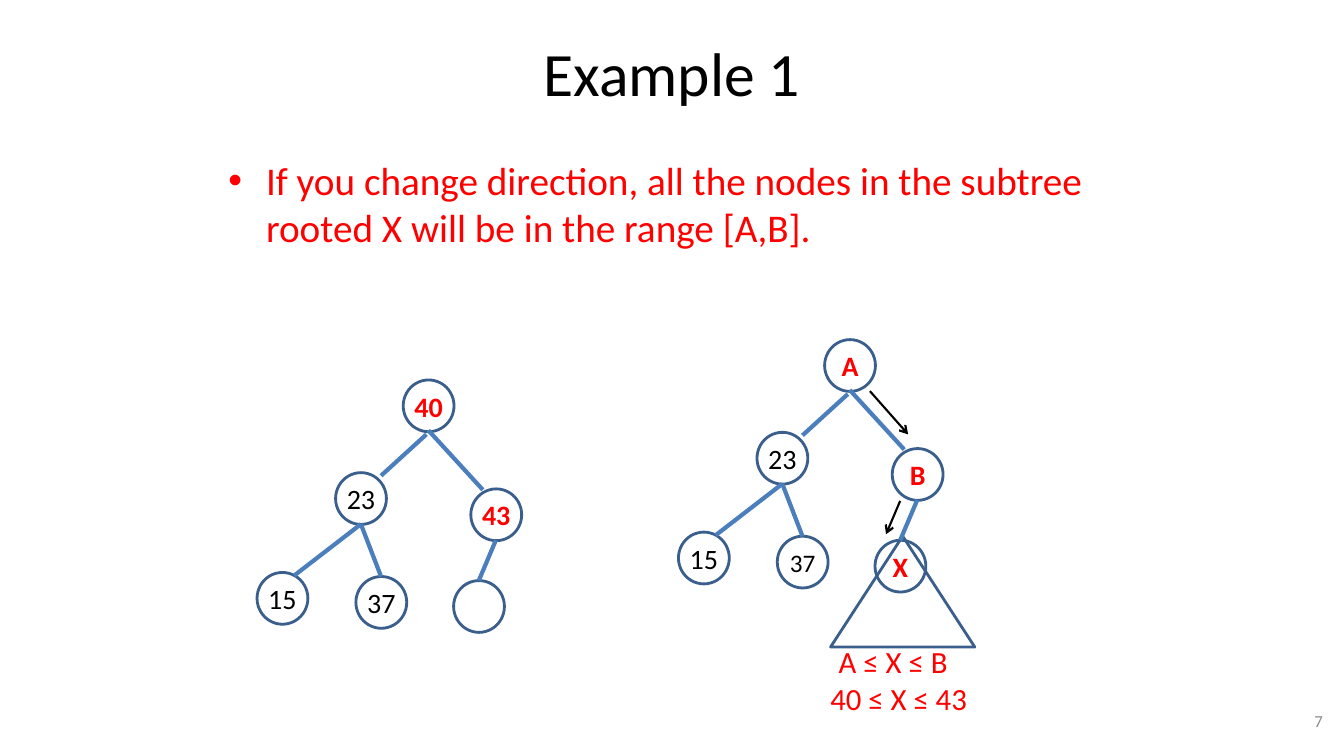
from lxml import etree
from pptx import Presentation
from pptx.dml.color import RGBColor
from pptx.enum.shapes import MSO_CONNECTOR as CONN, MSO_SHAPE as SHAPE
from pptx.enum.text import MSO_ANCHOR as ANCHOR, PP_ALIGN as ALIGN
from pptx.oxml.ns import qn
from pptx.util import Pt

BLACK = RGBColor(0x00, 0x00, 0x00)
RED = RGBColor(0xFF, 0x00, 0x00)
GREY = RGBColor(0x8C, 0x8C, 0x8C)
OUTLINE = RGBColor(0x3A, 0x5F, 0x8C)
EDGE = RGBColor(0x4B, 0x7E, 0xBC)

NODE_W, NODE_H = 36.3, 37
NODE_OFFSETS = [(0, 0), (-48.3, 66.2), (48.3, 77.8),
                (-104.4, 137.5), (-33.8, 140.4), (36, 143.3)]
EDGE_OFFSETS = [(16.6, 38.9, -15.8, 68.4), (18, 36, 56.9, 78.5),
                (-15.8, 140.4, -30.2, 103), (-30.2, 103, -77.8, 139.7),
                (66.2, 114.5, 54, 143.3)]


def add_text(p, text, size=20, color=BLACK, bold=False, align=ALIGN.LEFT,
             left=0, hanging=0, bullet=None, font="Calibri"):
    p.alignment = align
    pPr = p._p.get_or_add_pPr()
    if left:
        pPr.set("marL", str(Pt(left)))
        pPr.set("indent", str(-Pt(hanging)))
    if bullet:
        etree.SubElement(pPr, qn("a:buFont")).set("typeface", "Arial")
        etree.SubElement(pPr, qn("a:buChar")).set("char", bullet)
    r = p.add_run()
    r.text = text
    r.font.name, r.font.size, r.font.bold = font, Pt(size), bold
    r.font.color.rgb = color


class TreeSlide:
    """Draws text, nodes, edges and trees on one slide in one style."""

    def __init__(self, prs):
        self.s = prs.slides.add_slide(prs.slide_layouts[6])

    def text(self, x, y, w, h, lines, anchor=ANCHOR.TOP):
        tf = self.s.shapes.add_textbox(Pt(x), Pt(y), Pt(w), Pt(h)).text_frame
        tf.word_wrap = True
        tf.vertical_anchor = anchor
        for i, (text, style) in enumerate(lines):
            add_text(tf.add_paragraph() if i else tf.paragraphs[0], text, **style)

    def outline(self, shapes, kind, x, y, w, h):
        sp = shapes.add_shape(kind, Pt(x), Pt(y), Pt(w), Pt(h))
        sp.shadow.inherit = False
        sp.fill.background()
        sp.line.color.rgb = OUTLINE
        sp.line.width = Pt(2)
        return sp

    def node(self, shapes, x, y, label, **style):
        tf = self.outline(shapes, SHAPE.OVAL, x, y, NODE_W, NODE_H).text_frame
        tf.margin_left = tf.margin_right = tf.margin_top = tf.margin_bottom = 0
        tf.word_wrap = False
        tf.vertical_anchor = ANCHOR.MIDDLE
        if label:
            add_text(tf.paragraphs[0], label, align=ALIGN.CENTER, **style)

    def line(self, shapes, x1, y1, x2, y2, color=EDGE, width=3, arrow=False):
        cn = shapes.add_connector(CONN.STRAIGHT, Pt(x1), Pt(y1), Pt(x2), Pt(y2))
        cn.line.color.rgb = color
        cn.line.width = Pt(width)
        if arrow:
            etree.SubElement(cn.line._get_or_add_ln(), qn("a:tailEnd")).set("type", "arrow")
        etree.SubElement(cn._element.spPr, qn("a:effectLst"))

    def tree(self, x, y, nodes):
        shapes = self.s.shapes.add_group_shape().shapes
        for (dx, dy), (label, style) in zip(NODE_OFFSETS, nodes):
            self.node(shapes, x + dx, y + dy, label, **style)
        for x1, y1, x2, y2 in EDGE_OFFSETS:
            self.line(shapes, x + x1, y + y1, x + x2, y + y2)


def main():
    prs = Presentation()
    prs.slide_width, prs.slide_height = Pt(960), Pt(540)
    slide = TreeSlide(prs)
    key = dict(color=RED, bold=True)
    range_style = dict(size=22, color=RED)

    slide.outline(slide.s.shapes, SHAPE.ISOSCELES_TRIANGLE, 593.3, 383, 103, 79.2)
    slide.text(48, 6, 864, 90, [("Example 1", dict(size=44, align=ALIGN.CENTER))],
               ANCHOR.MIDDLE)
    slide.text(156, 108, 648, 86.4, [
        ("If you change direction, all the nodes in the subtree rooted X "
         "will be in the range [A,B].",
         dict(size=28, color=RED, left=27, hanging=27, bullet="•"))])
    slide.text(728, 500.4, 224, 28.8,
               [("7", dict(size=12, color=GREY, align=ALIGN.RIGHT))], ANCHOR.MIDDLE)

    slide.tree(589, 242.6, [("A", key), ("23", {}), ("B", key),
                            ("15", {}), ("37", dict(size=18)), ("X", key)])
    slide.text(586, 455.8, 121.7, 60.5, [
        ("A ≤ X ≤ B", dict(range_style, left=6)), ("40 ≤ X ≤ 43", range_style)])
    for ends in [(643, 357.8, 632.9, 381.6), (621.4, 279.4, 648.7, 310.3)]:
        slide.line(slide.s.shapes, *ends, color=BLACK, width=1.5, arrow=True)
    slide.tree(288, 271.4, [("40", key), ("23", {}), ("43", key),
                            ("15", {}), ("37", {}), ("", {})])
    prs.save("out.pptx")


if __name__ == "__main__":
    main()
